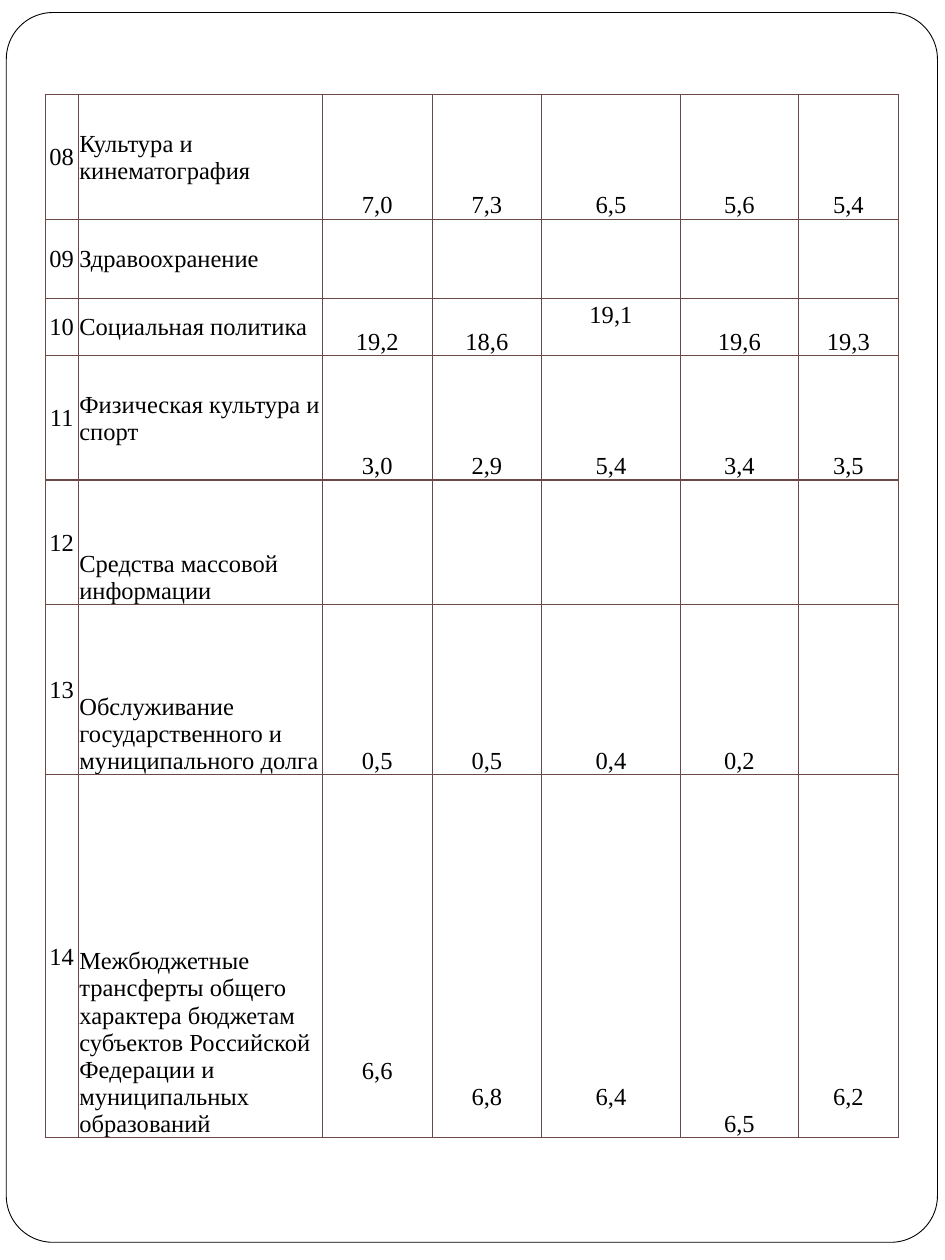
from lxml import etree
from pptx import Presentation
from pptx import util as u
from pptx.dml.color import RGBColor
from pptx.enum import shapes, text
from pptx.oxml import ns

BLACK = RGBColor(0x00, 0x00, 0x00)
WHITE = RGBColor(0xFF, 0xFF, 0xFF)
BROWN = RGBColor(0x6C, 0x49, 0x49)
MIDDLE = text.MSO_ANCHOR.MIDDLE
BOTTOM = text.MSO_ANCHOR.BOTTOM
LINE_HEIGHT = 0.21

COLUMNS = [0.26, 1.94, 0.87, 0.87, 1.1, 0.94, 0.79]
SECTIONS = [
    (0.99, MIDDLE, ["08", "Культура и кинематография", "7,0", "7,3", "6,5", "5,6", "5,4"]),
    (0.63, MIDDLE, ["09", "Здравоохранение"]),
    (0.45, MIDDLE, ["10", "Социальная политика", "19,2", "18,6", "19,1", "19,6", "19,3"]),
    (0.99, MIDDLE, ["11", "Физическая культура и спорт", "3,0", "2,9", "5,4", "3,4", "3,5"]),
    (0.99, BOTTOM, ["12", "Средства массовой информации"]),
    (1.35, BOTTOM, ["13", "Обслуживание государственного и муниципального долга",
                    "0,5", "0,5", "0,4", "0,2"]),
    (2.88, BOTTOM, ["14", "Межбюджетные трансферты общего характера бюджетам субъектов "
                    "Российской Федерации и муниципальных образований",
                    "6,6", "6,8", "6,4", "6,5", "6,2"]),
]
RAISED_LINES = {(2, 4): 1, (6, 2): 2, (6, 3): 1, (6, 4): 1, (6, 6): 1}


class SlideBuilder:
    font_name = "Times New Roman"
    font_size = u.Pt(14)
    border_width = u.Pt(0.75)

    def __init__(self, slide):
        self.slide = slide

    def frame(self, left, top, width, height):
        sp = self.slide.shapes.add_shape(
            shapes.MSO_SHAPE.ROUNDED_RECTANGLE,
            *map(u.Inches, (left, top, width, height)))
        sp.adjustments[0] = 0.05
        sp.shadow.inherit = False
        sp.fill.solid()
        sp.fill.fore_color.rgb = WHITE
        sp.line.color.rgb = BLACK
        sp.line.width = u.Pt(0.5)

    def borders(self, cell):
        tc_pr = cell._tc.get_or_add_tcPr()
        for i, side in enumerate(("a:lnL", "a:lnR", "a:lnT", "a:lnB")):
            ln = etree.Element(ns.qn(side), w=str(self.border_width))
            fill = etree.SubElement(ln, ns.qn("a:solidFill"))
            etree.SubElement(fill, ns.qn("a:srgbClr"), val=str(BROWN))
            tc_pr.insert(i, ln)

    def cell(self, cell, content, anchor, align, raised):
        cell.fill.background()
        self.borders(cell)
        cell.vertical_anchor = anchor
        cell.margin_left = cell.margin_right = cell.margin_top = u.Inches(0.01)
        cell.margin_bottom = u.Inches(raised * LINE_HEIGHT)
        p = cell.text_frame.paragraphs[0]
        p.alignment = align
        p.font.name = self.font_name
        p.font.size = self.font_size
        p.font.color.rgb = BLACK
        if content:
            p.add_run().text = content

    def table(self, left, top, columns, sections):
        height = sum(section[0] for section in sections)
        table = self.slide.shapes.add_table(
            len(sections), len(columns),
            *map(u.Inches, (left, top, sum(columns), height))).table
        table.first_row = table.horz_banding = False
        for column, width in zip(table.columns, columns):
            column.width = u.Inches(width)
        for r, (row_height, name_anchor, values) in enumerate(sections):
            table.rows[r].height = u.Inches(row_height)
            anchors = [MIDDLE, name_anchor] + [BOTTOM] * (len(columns) - 2)
            for c, anchor in enumerate(anchors):
                content = values[c] if c < len(values) else ""
                align = text.PP_ALIGN.LEFT if c == 1 else text.PP_ALIGN.CENTER
                self.cell(table.cell(r, c), content, anchor, align,
                          RAISED_LINES.get((r, c), 0))


def main():
    prs = Presentation()
    prs.slide_width = u.Inches(7.5)
    prs.slide_height = u.Inches(10)
    s = SlideBuilder(prs.slides.add_slide(prs.slide_layouts[6]))
    s.frame(0.05, 0.1, 7.39, 9.76)
    s.table(0.36, 0.75, COLUMNS, SECTIONS)
    prs.save("out.pptx")


if __name__ == "__main__":
    main()
